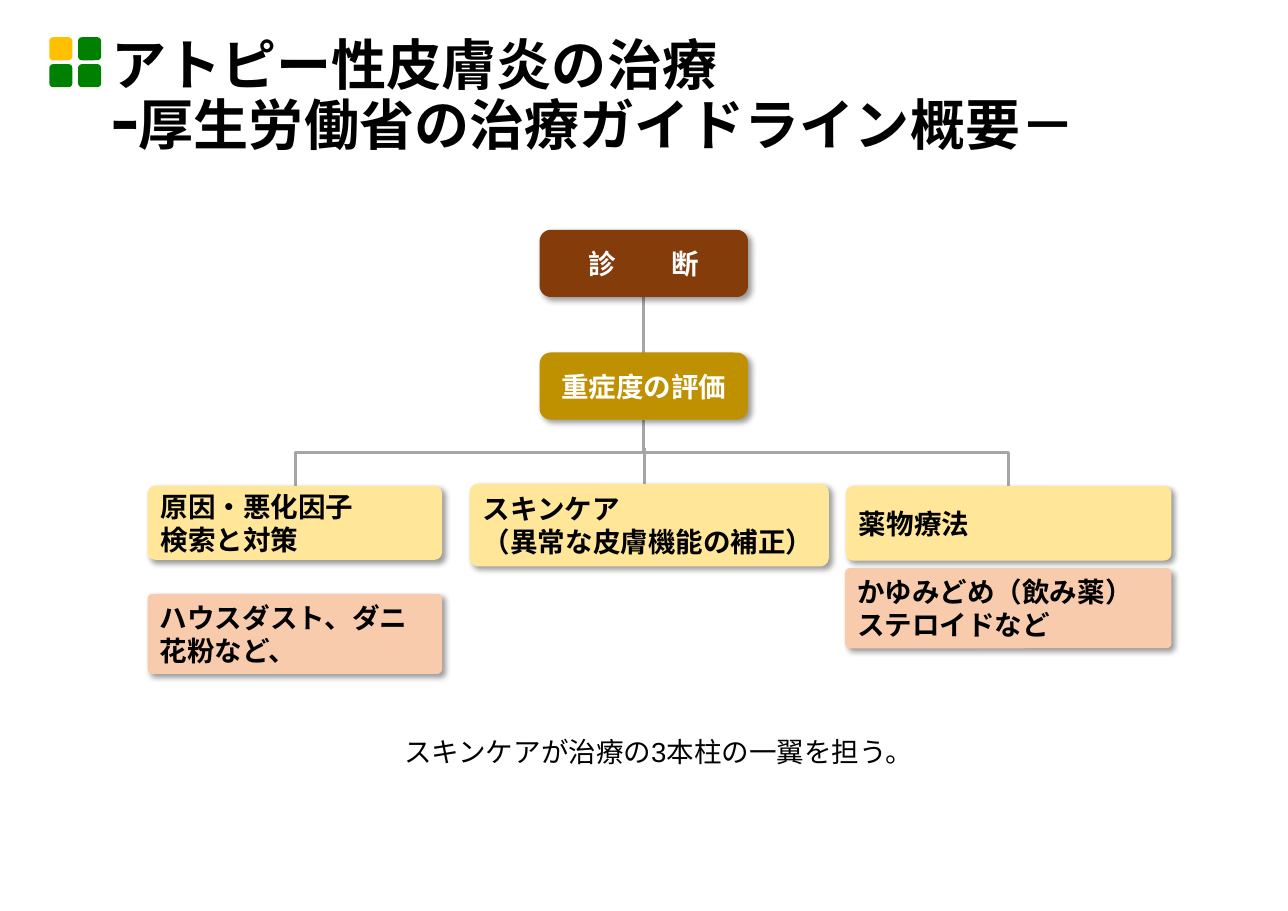
from dataclasses import dataclass
from lxml.etree import SubElement
from pptx import Presentation
from pptx.dml.color import RGBColor
from pptx.enum.shapes import MSO_CONNECTOR, MSO_SHAPE
from pptx.enum.text import MSO_ANCHOR, MSO_AUTO_SIZE, PP_ALIGN
from pptx.oxml.ns import qn
from pptx.util import Pt


@dataclass(frozen=True)
class Theme:
    black: str = "000000"
    white: str = "FFFFFF"
    brown: str = "843C0B"
    ochre: str = "BF9000"
    yellow: str = "FFE699"
    peach: str = "F8CBAD"
    gray: str = "A6A6A6"
    amber: str = "FFC000"
    green: str = "008000"
    title_font: str = "Noto Sans CJK JP"
    body_font: str = "Arial"
    title_size: int = 36
    body_size: int = 18


THEME = Theme()


def style_paragraph(para, color, bold, name=THEME.body_font, size=THEME.body_size):
    font = para.font
    font.name, font.size, font.bold = name, Pt(size), bold
    font.color.rgb = RGBColor.from_string(color)
    # Use the same typeface for Japanese characters
    latin = para._p.pPr.find(qn("a:defRPr")).find(qn("a:latin"))
    east_asian = latin.makeelement(qn("a:ea"), {"typeface": name})
    latin.addnext(east_asian)
    for run in para.runs:
        run.font.name = name
        latin = run._r.rPr.find(qn("a:latin"))
        latin.addnext(latin.makeelement(qn("a:ea"), {"typeface": name}))


def add_shadow(box):
    effects = box._element.spPr.find(qn("a:effectLst"))
    shadow = SubElement(effects, qn("a:outerShdw"), blurRad=str(Pt(4)),
                        dist=str(Pt(3)), dir="2700000", algn="tl", rotWithShape="0")
    color = SubElement(shadow, qn("a:srgbClr"), val=THEME.black)
    SubElement(color, qn("a:alpha"), val="40000")


def add_rounded(shapes, left, top, width, height, fill, corner=0.167):
    box = shapes.add_shape(MSO_SHAPE.ROUNDED_RECTANGLE,
                           Pt(left), Pt(top), Pt(width), Pt(height))
    box.adjustments[0] = corner
    box.shadow.inherit = False
    box.fill.solid()
    box.fill.fore_color.rgb = RGBColor.from_string(fill)
    box.line.fill.background()
    return box


def add_card(page, place, text, fill, corner, color=THEME.black, align=PP_ALIGN.LEFT):
    box = add_rounded(page.shapes, *place, fill, corner)
    add_shadow(box)
    frame = box.text_frame
    frame.word_wrap = False
    frame.vertical_anchor = MSO_ANCHOR.MIDDLE
    frame.text = text
    for para in frame.paragraphs:
        para.alignment = align
        style_paragraph(para, color, True)


def add_line(page, kind, start, end, width=1.75):
    line = page.shapes.add_connector(kind, *(Pt(value) for value in (*start, *end)))
    line.line.color.rgb = RGBColor.from_string(THEME.gray)
    line.line.width = Pt(width)
    SubElement(line._element.spPr, qn("a:effectLst"))
    return line


def add_branch(page, start, end):
    """Elbow that leaves downwards: a sideways elbow turned by a quarter."""
    middle_x, middle_y = (start[0] + end[0]) / 2, (start[1] + end[1]) / 2
    half_width, half_height = (end[1] - start[1]) / 2, abs(end[0] - start[0]) / 2
    to_right = end[0] > start[0]
    reach = -half_width if to_right else half_width
    elbow = add_line(page, MSO_CONNECTOR.ELBOW,
                     (middle_x - reach, middle_y - half_height),
                     (middle_x + reach, middle_y + half_height))
    degrees = 270 if to_right else 90
    elbow._element.spPr.find(qn("a:xfrm")).set("rot", str(degrees * 60000))


def add_title(page, text):
    title = page.shapes.title
    title.left, title.top, title.width, title.height = Pt(65.5), Pt(19.4), Pt(714.2), Pt(88.6)
    frame = title.text_frame
    frame.word_wrap = True
    frame.auto_size = MSO_AUTO_SIZE.NONE
    frame.vertical_anchor = MSO_ANCHOR.MIDDLE
    frame.text = text
    para = frame.paragraphs[0]
    para.alignment = PP_ALIGN.LEFT
    para.line_spacing = 0.9
    style_paragraph(para, THEME.black, True, THEME.title_font, THEME.title_size)


def add_title_mark(page):
    group = page.shapes.add_group_shape()
    for index in range(4):
        row, column = divmod(index, 2)
        add_rounded(group.shapes, 32.2 + 18.8 * column, 24.3 + 17.6 * row, 15.1, 15.1,
                    THEME.green if index else THEME.amber)


def add_note(page, text):
    box = page.shapes.add_textbox(Pt(257), Pt(476.6), Pt(352), Pt(29))
    box.text_frame.word_wrap = False
    box.text_frame.text = text
    style_paragraph(box.text_frame.paragraphs[0], THEME.black, False)


def main():
    deck = Presentation()
    deck.slide_width, deck.slide_height = Pt(841.68), Pt(595.44)
    page = deck.slides.add_slide(deck.slide_layouts[5])

    # Heading
    add_title(page, "アトピー性皮膚炎の治療\vｰ厚生労働省の治療ガイドライン概要－")
    add_title_mark(page)

    # Lines of the tree
    center, step_bottom = 420.5, 274.3
    add_line(page, MSO_CONNECTOR.STRAIGHT, (center, 193.9), (center, 230.4))
    for branch_x in (193, 659.2):
        add_branch(page, (center, step_bottom), (branch_x, 317.5))
    add_line(page, MSO_CONNECTOR.STRAIGHT, (421.2, 293), (421.2, 322.6), 2.25)

    # Steps
    steps = (("診　　断", 150.2, THEME.brown), ("重症度の評価", 230.4, THEME.ochre))
    for text, top, fill in steps:
        add_card(page, (352.6, top, 136.2, 43.9), text, fill, 0.167,
                 THEME.white, PP_ALIGN.CENTER)

    # Three pillars of treatment
    pillars = (
        ("原因・悪化因子\v検索と対策", (96.5, 317.5, 192.4, 48.4)),
        ("スキンケア\v（異常な皮膚機能の補正）", (306.9, 316.2, 234.7, 54)),
        ("薬物療法", (552.8, 317.5, 212.7, 48.9)),
    )
    for text, place in pillars:
        add_card(page, place, text, THEME.yellow, 0.099)

    # Examples
    examples = (
        ("ハウスダスト、ダニ\n花粉など、", (96.5, 388.1, 192.4, 52.4)),
        ("かゆみどめ（飲み薬）\nステロイドなど", (552.2, 371.3, 213.3, 52.4)),
    )
    for text, place in examples:
        add_card(page, place, text, THEME.peach, 0.059)

    add_note(page, "スキンケアが治療の3本柱の一翼を担う。")
    deck.save("out.pptx")


if __name__ == "__main__":
    main()
